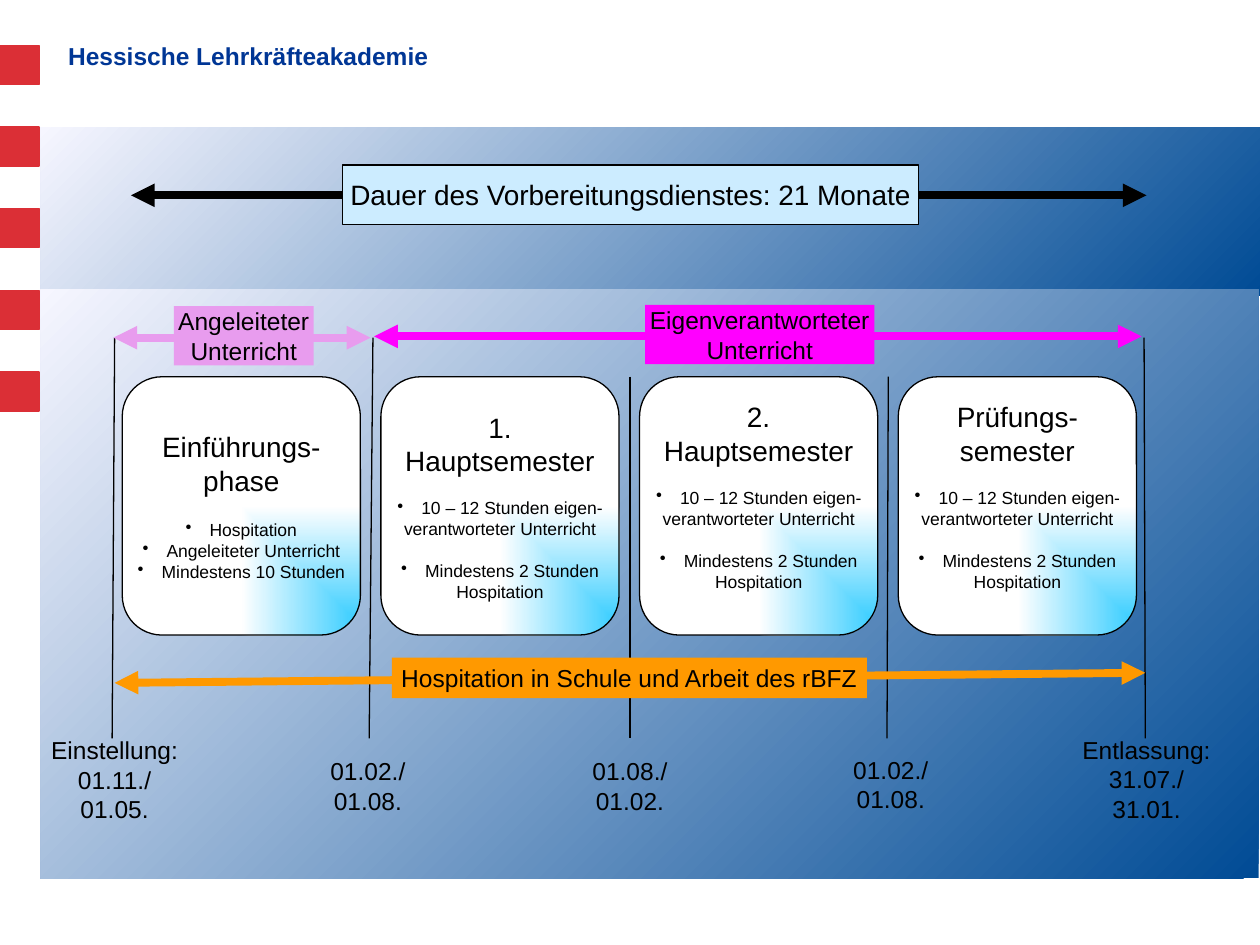
from dataclasses import dataclass

from lxml.etree import SubElement
from pptx import Presentation
from pptx.dml.color import RGBColor
from pptx.enum.shapes import MSO_CONNECTOR, MSO_SHAPE
from pptx.enum.text import MSO_ANCHOR, MSO_AUTO_SIZE, PP_ALIGN
from pptx.oxml.ns import qn
from pptx.util import Inches, Pt


@dataclass(frozen=True)
class Theme:
    font: str = "Arial"
    ink: str = "000000"
    title: str = "003695"
    stripe: str = "DB2F36"
    panel: tuple = ("004B95", "F6F6FF")
    card: tuple = ("33CCFF", "FFFFFF")
    duration: str = "CCECFF"
    guided: str = "E89CEE"
    independent: str = "FF00FF"
    observation: str = "FF9900"
    heading_size: float = 16
    label_size: float = 14
    body_size: float = 10
    thin: float = 0.75
    thick: float = 4.5


@dataclass(frozen=True)
class Line:
    text: str
    size: float
    bullet: bool = False
    gap: float = 0


class PhaseSlide:
    columns = 100

    def __init__(self, deck, theme):
        self.theme = theme
        self.cell = deck.slide_width / self.columns
        self.slide = deck.slides.add_slide(deck.slide_layouts[5])

    def grid(self, *cells):
        return [round(cell * self.cell) for cell in cells]

    def title(self, text, area):
        box = self.slide.shapes.title
        box.left, box.top, box.width, box.height = self.grid(*area)
        frame = box.text_frame
        frame.auto_size = MSO_AUTO_SIZE.NONE
        frame.vertical_anchor = MSO_ANCHOR.TOP
        frame.margin_left = frame.margin_right = 0
        para = frame.paragraphs[0]
        para.text = text
        para.alignment = PP_ALIGN.LEFT
        para.line_spacing = 0.9
        self.style(para, self.theme.label_size, self.theme.title, True)

    def style(self, para, size, color, bold=False):
        para.font.name = self.theme.font
        para.font.size = Pt(size)
        para.font.bold = bold
        para.font.color.rgb = RGBColor.from_string(color)

    def shape(self, area, fill, outline=None, kind=MSO_SHAPE.RECTANGLE):
        box = self.slide.shapes.add_shape(kind, *self.grid(*area))
        box.shadow.inherit = False
        if isinstance(fill, tuple):
            box.fill.gradient()
            box.fill.gradient_angle = 135
            for stop, color in zip(box.fill.gradient_stops, fill):
                stop.color.rgb = RGBColor.from_string(color)
        else:
            box.fill.solid()
            box.fill.fore_color.rgb = RGBColor.from_string(fill)
        if outline:
            box.line.color.rgb = RGBColor.from_string(outline)
            box.line.width = Pt(self.theme.thin)
        else:
            box.line.fill.background()
        return box

    def add_lines(self, box, lines, space_below=0):
        frame = box.text_frame
        frame.word_wrap = False
        frame.vertical_anchor = MSO_ANCHOR.MIDDLE
        frame.margin_bottom = Inches(0.05) + Pt(space_below)
        for index, line in enumerate(lines):
            para = frame.add_paragraph() if index else frame.paragraphs[0]
            para.text = line.text
            para.alignment = PP_ALIGN.CENTER
            if line.gap:
                para.space_before = Pt(line.gap)
            if line.bullet:
                properties = para._p.get_or_add_pPr()
                properties.set("marL", str(Inches(0.19)))
                properties.set("indent", str(-Inches(0.19)))
                SubElement(properties, qn("a:buChar"), char="•")
            self.style(para, line.size, self.theme.ink)

    def label(self, area, texts, fill, outline=None, size=None):
        box = self.shape(area, fill, outline)
        self.add_lines(box, [Line(text, size or self.theme.label_size) for text in texts])

    def date(self, area, texts, space_below=0):
        box = self.slide.shapes.add_textbox(*self.grid(*area))
        lines = [Line(text, self.theme.label_size) for text in texts]
        self.add_lines(box, lines, space_below)

    def card(self, area, lines, space_below):
        box = self.shape(area, self.theme.card, self.theme.ink, MSO_SHAPE.ROUNDED_RECTANGLE)
        gradient = box._element.spPr.find(qn("a:gradFill"))
        gradient.remove(gradient.find(qn("a:lin")))
        focus = SubElement(gradient, qn("a:path"), {"path": "rect"})
        SubElement(focus, qn("a:fillToRect"), l="100000", t="100000")
        self.add_lines(box, lines, space_below)

    def line(self, start, end, color, width, arrows=False):
        rule = self.slide.shapes.add_connector(
            MSO_CONNECTOR.STRAIGHT, *self.grid(*start, *end))
        rule.line.color.rgb = RGBColor.from_string(color)
        rule.line.width = Pt(width)
        if arrows:
            for tip in ("a:headEnd", "a:tailEnd"):
                SubElement(rule.line._ln, qn(tip), type="triangle")
        SubElement(rule._element.spPr, qn("a:effectLst"))

    def arrow(self, start, end, color):
        self.line(start, end, color, self.theme.thick, True)


def main():
    theme = Theme()
    deck = Presentation()
    deck.slide_width, deck.slide_height = Inches(10), Inches(7.5)
    page = PhaseSlide(deck, theme)

    for panel in ((3.2, 10.1, 96.8, 13.4), (3.2, 23, 96.7, 46.7)):
        page.shape(panel, theme.panel)
    for index in range(5):
        page.shape((0, 3.6 + 6.48 * index, 3.1, 3.1), theme.stripe, theme.stripe)
    page.title("Hessische Lehrkräfteakademie", (5.4, 3, 80.3, 3.1))

    for top_column, top_row, bottom_column in (
            (9.1, 26.8, 8.9), (29.6, 26.8, 29.3), (50, 29.9, 50),
            (70.5, 29.9, 70.4), (90.8, 26.8, 90.9)):
        page.line((top_column, top_row), (bottom_column, 58.6), theme.ink, theme.thin)

    body = theme.body_size
    blank = 1.15 * body
    introduction = [
        Line("Hospitation", body, True, 12.65),
        Line("Angeleiteter Unterricht", body, True),
        Line("Mindestens 10 Stunden", body, True),
    ]
    teaching = [
        Line("10 – 12 Stunden eigen-", body, True, blank),
        Line("verantworteter Unterricht", body),
        Line("Mindestens 2 Stunden", body, True, blank),
        Line("Hospitation", body),
    ]
    cards = (
        ("Einführungs-\vphase", introduction, 0),
        ("1.\vHauptsemester", teaching, 0),
        ("2.\vHauptsemester", teaching, blank),
        ("Prüfungs-\vsemester", teaching, blank),
    )
    for index, (heading, lines, space_below) in enumerate(cards):
        page.card((9.7 + 20.53 * index, 29.9, 18.9, 20.5),
                  [Line(heading, theme.heading_size), *lines], space_below)

    page.arrow((10.4, 15.5), (91, 15.5), theme.ink)
    page.label((27.2, 13.1, 45.7, 4.7), ["Dauer des Vorbereitungsdienstes: 21 Monate"],
               theme.duration, theme.ink, theme.heading_size)
    page.arrow((29.7, 26.7), (90.6, 26.7), theme.independent)
    page.label((51.2, 24.2, 18.2, 4.7), ["Eigenverantworteter", "Unterricht"],
               theme.independent)
    page.arrow((9.1, 54.2), (90.9, 53.4), theme.observation)
    page.label((31.1, 52.2, 37.7, 3.2), ["Hospitation in Schule und Arbeit des rBFZ"],
               theme.observation)
    page.arrow((9, 26.8), (29.4, 26.8), theme.guided)
    page.label((13.8, 24.3, 11.1, 4.7), ["Angeleiteter", "Unterricht"], theme.guided)

    dates = (
        (2.8, 59.1, 5.5, ["Einstellung:\v01.11./", "01.05."], 0),
        (22.9, 58.8, 7.1, ["01.02./", "01.08."], 0),
        (43.7, 58.8, 7.1, ["01.08./", "01.02."], 0),
        (64.4, 58.7, 7.1, ["01.02./", "01.08."], 0),
        (84.7, 59.4, 7.1, ["Entlassung:\v31.07./", "31.01."], 1.15 * theme.label_size),
    )
    for column, row, height, texts, space_below in dates:
        page.date((column, row, 12.6, height), texts, space_below)

    deck.save("out.pptx")


if __name__ == "__main__":
    main()
